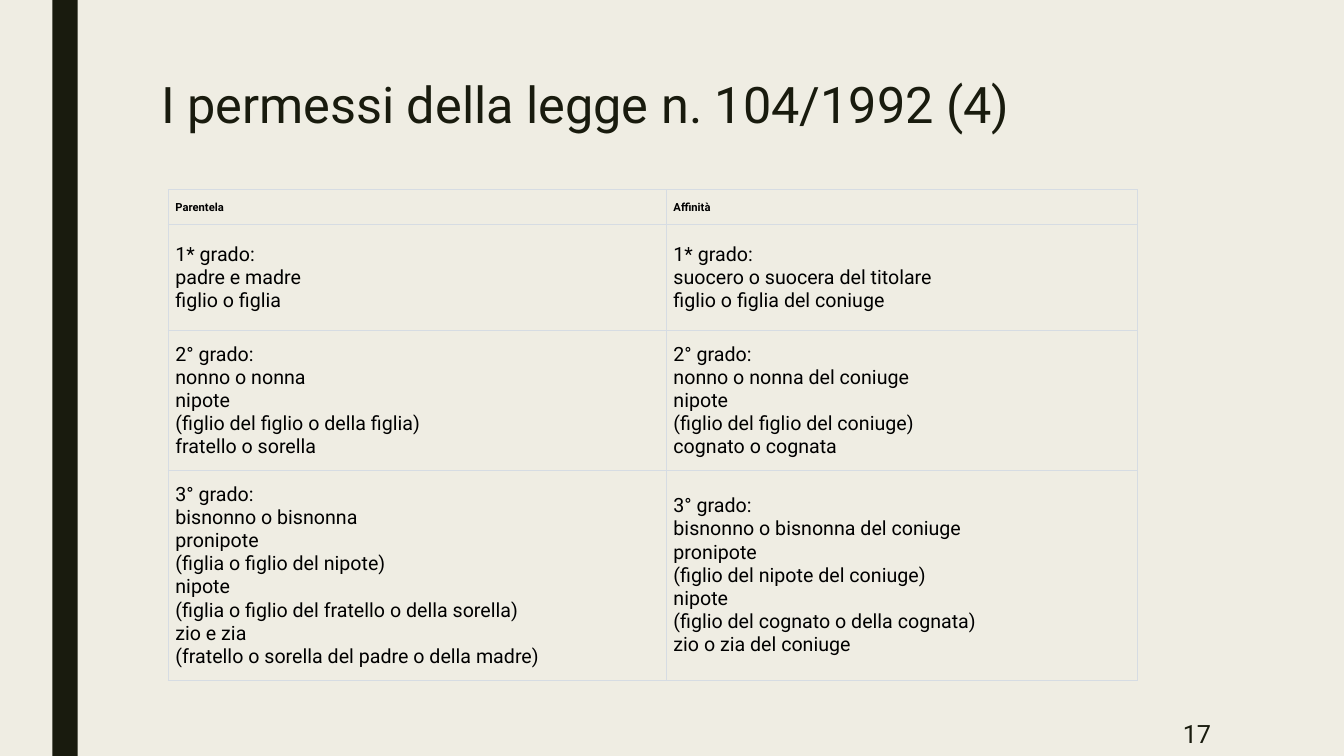
from lxml import etree
from pptx import Presentation
from pptx.dml.color import RGBColor
from pptx.enum.shapes import MSO_SHAPE
from pptx.enum.text import MSO_ANCHOR, PP_ALIGN
from pptx.oxml.ns import qn
from pptx.util import Inches, Pt

COLORS = {"paper": "EFEDE3", "ink": "191B0E", "text": "000000", "border": "D6DCE3"}
TITLE = "I permessi della legge n. 104/1992 (4)"
COLUMNS = [4.94, 4.67]
ROWS = [0.35, 1.05, 1.39, 2.08]
RELATIVES = [
    ("Parentela", "Affinità"),
    ("1* grado:\npadre e madre\nfiglio o figlia",
     "1* grado:\nsuocero o suocera del titolare\nfiglio o figlia del coniuge"),
    ("2° grado:\nnonno o nonna\nnipote\n(figlio del figlio o della figlia)\n"
     "fratello o sorella",
     "2° grado:\nnonno o nonna del coniuge\nnipote\n(figlio del figlio del coniuge)\n"
     "cognato o cognata"),
    ("3° grado:\nbisnonno o bisnonna\npronipote\n(figlia o figlio del nipote)\nnipote\n"
     "(figlia o figlio del fratello o della sorella)\nzio e zia\n"
     "(fratello o sorella del padre o della madre)",
     "3° grado:\nbisnonno o bisnonna del coniuge\npronipote\n"
     "(figlio del nipote del coniuge)\nnipote\n"
     "(figlio del cognato o della cognata)\nzio o zia del coniuge"),
]


def rgb(name):
    """Return the named palette colour."""
    return RGBColor.from_string(COLORS[name])


def write(tf, text, size, color, bold=False, **layout):
    """Write one paragraph per line and format each of them."""
    tf.text = text
    for p in tf.paragraphs:
        for name, value in layout.items():
            setattr(p, name, value)
        for r in p.runs:
            for name, value in {"name": "Roboto", "size": Pt(size), "bold": bold}.items():
                setattr(r.font, name, value)
            r.font.color.rgb = rgb(color)


def add_background(s, x, y, w, h):
    """Colour the slide and draw its vertical bar in the box."""
    s.background.fill.solid()
    s.background.fill.fore_color.rgb = rgb("paper")
    bar = s.shapes.add_shape(MSO_SHAPE.RECTANGLE, *map(Inches, (x, y, w, h)))
    bar.shadow.inherit = False
    bar.fill.solid()
    bar.fill.fore_color.rgb = rgb("ink")
    bar.line.fill.background()


def add_text(s, x, y, w, h, text, size, anchor, **layout):
    """Place a wrapped text box."""
    tf = s.shapes.add_textbox(*map(Inches, (x, y, w, h))).text_frame
    tf.word_wrap = True
    tf.vertical_anchor = anchor
    write(tf, text, size, "ink", **layout)


def add_borders(cell):
    """Draw thin lines on all four sides of a cell."""
    tcPr = cell._tc.get_or_add_tcPr()
    for i, side in enumerate(("a:lnL", "a:lnR", "a:lnT", "a:lnB")):
        ln = etree.Element(qn(side), w=str(Pt(0.75)))
        fill = etree.SubElement(ln, qn("a:solidFill"))
        etree.SubElement(fill, qn("a:srgbClr"), val=COLORS["border"])
        tcPr.insert(i, ln)


def add_relatives_table(s, x, y):
    """Place the table of relatives with its top left corner at x, y."""
    box = map(Inches, (x, y, sum(COLUMNS), sum(ROWS)))
    table = s.shapes.add_table(len(ROWS), len(COLUMNS), *box).table
    for column, width in zip(table.columns, COLUMNS):
        column.width = Inches(width)
    for i, (row, height) in enumerate(zip(table.rows, ROWS)):
        row.height = Inches(height)
        for cell, text in zip(row.cells, RELATIVES[i]):
            cell.fill.background()
            cell.vertical_anchor = MSO_ANCHOR.MIDDLE
            for side in ("left", "right", "top", "bottom"):
                setattr(cell, f"margin_{side}", Inches(0.07))
            write(cell.text_frame, text, 14 if i else 8, "text", bold=i == 0)
            add_borders(cell)


def main():
    """Build the slide and save it."""
    prs = Presentation()
    prs.slide_width, prs.slide_height = Inches(13.33), Inches(7.5)
    s = prs.slides.add_slide(prs.slide_layouts[6])
    add_background(s, 0.52, 0, 0.25, 7.5)
    add_text(s, 1.5, 0.75, 10.5, 1.62, TITLE, 36, MSO_ANCHOR.TOP, line_spacing=0.89)
    add_relatives_table(s, 1.67, 1.88)
    add_text(s, 10.36, 7.06, 1.75, 0.44, "17", 18, MSO_ANCHOR.MIDDLE,
             alignment=PP_ALIGN.RIGHT)
    prs.save("out.pptx")


if __name__ == "__main__":
    main()
